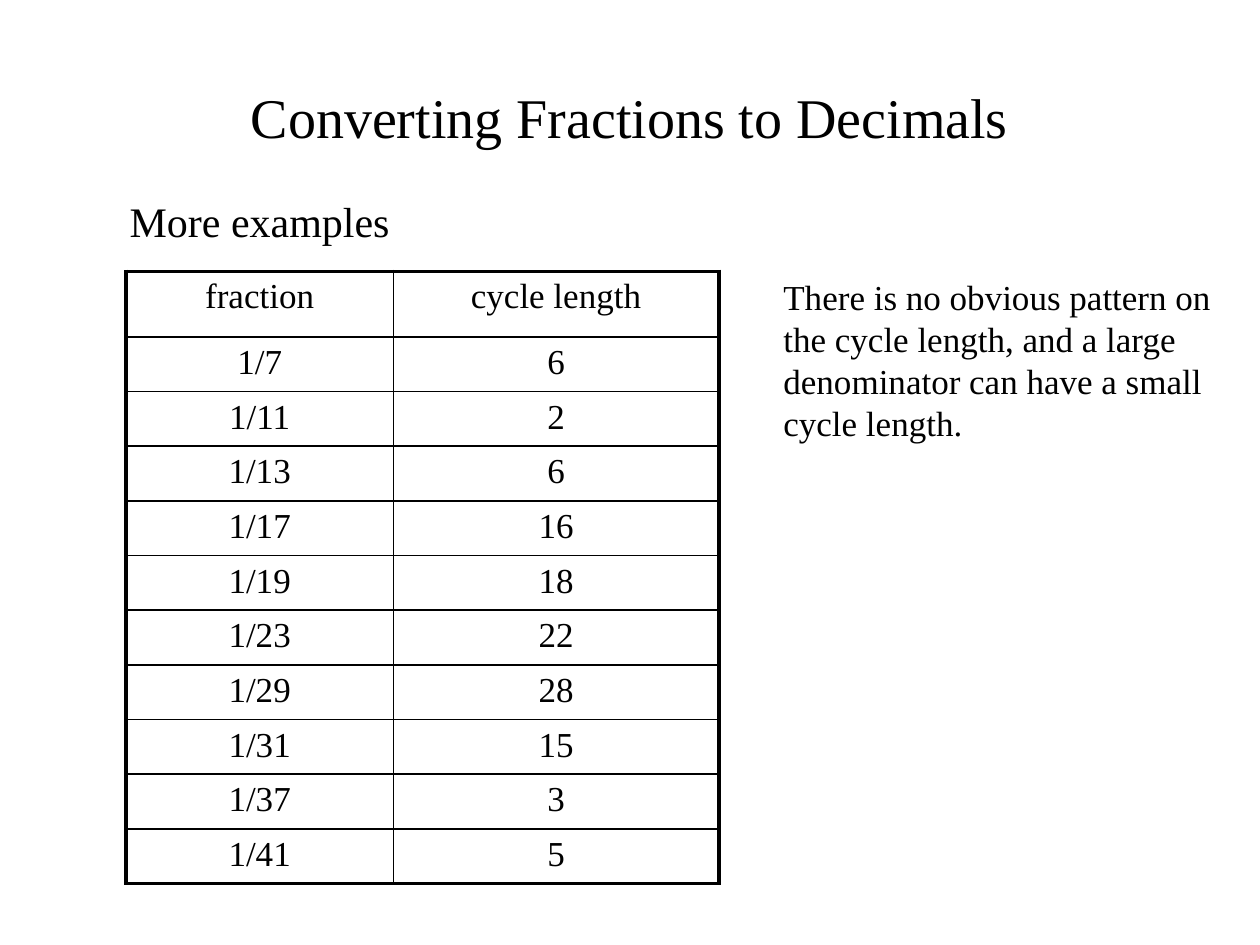
from lxml.etree import SubElement
from pptx import Presentation
from pptx.dml.color import RGBColor
from pptx.enum.text import MSO_ANCHOR as Anchor, PP_ALIGN as Align
from pptx.oxml.ns import qn
from pptx.util import Pt

# Content
TITLE = "Converting Fractions to Decimals"
SUBTITLE = "More examples"
NOTE = ("There is no obvious pattern on the cycle length, and a large "
        "denominator can have a small cycle length.")
ROWS = [
    ("fraction", "cycle length"),
    ("1/7", "6"), ("1/11", "2"), ("1/13", "6"), ("1/17", "16"),
    ("1/19", "18"), ("1/23", "22"), ("1/29", "28"), ("1/31", "15"),
    ("1/37", "3"), ("1/41", "5"),
]

# Layout and style, in points
FONT, BLACK = "Times New Roman", "000000"
TABLE_LEFT, TABLE_TOP = 72, 155
COLUMN_WIDTHS = (152.8, 186)
HEADER_HEIGHT, ROW_HEIGHT = 37.5, 31.25
OUTER_LINE, INNER_LINE = 2.25, 1
TEXTS = [
    # text, (left, top, width, height), size, frame format, alignment
    (TITLE, (36, 21.6, 648, 90), 32,
     {"word_wrap": True, "vertical_anchor": Anchor.MIDDLE}, Align.CENTER),
    (SUBTITLE, (67, 108, 164, 36.5), 24, {"word_wrap": False}, Align.LEFT),
    (NOTE, (440.6, 154, 259.2, 103), 20, {"word_wrap": True}, Align.LEFT),
]


def color(value):
    return RGBColor.from_string(value)


def write(frame, text, size, align):
    para = frame.paragraphs[0]
    para.alignment = align
    span = para.add_run()
    span.text = text
    for name, value in {"name": FONT, "size": Pt(size)}.items():
        setattr(span.font, name, value)
    span.font.color.rgb = color(BLACK)


def add_borders(cell, widths):
    properties = cell._tc.get_or_add_tcPr()
    for side, width in widths.items():
        line = SubElement(properties, qn(f"a:ln{side}"), w=str(Pt(width)))
        fill = SubElement(line, qn("a:solidFill"))
        SubElement(fill, qn("a:srgbClr"), val=BLACK)


deck = Presentation()
deck.slide_width, deck.slide_height = Pt(720), Pt(540)
page = deck.slides.add_slide(deck.slide_layouts[6])

# Title, subtitle and note
for text, place, size, frame_format, align in TEXTS:
    frame = page.shapes.add_textbox(*map(Pt, place)).text_frame
    for name, value in frame_format.items():
        setattr(frame, name, value)
    write(frame, text, size, align)

# Table of cycle lengths
heights = [HEADER_HEIGHT] + [ROW_HEIGHT] * (len(ROWS) - 1)
table = page.shapes.add_table(
    len(ROWS), len(COLUMN_WIDTHS), Pt(TABLE_LEFT), Pt(TABLE_TOP),
    Pt(sum(COLUMN_WIDTHS)), Pt(sum(heights))).table
table.first_row = table.horz_banding = False
for column, width in zip(table.columns, COLUMN_WIDTHS):
    column.width = Pt(width)

last_row, last_column = len(ROWS) - 1, len(COLUMN_WIDTHS) - 1
for r, values in enumerate(ROWS):
    table.rows[r].height = Pt(heights[r])
    for c, value in enumerate(values):
        cell = table.cell(r, c)
        write(cell.text_frame, value, 20, Align.CENTER)
        # Thick lines only on the outside; borders come before the fill
        on_edge = {"L": c == 0, "R": c == last_column,
                   "T": r == 0, "B": r == last_row}
        add_borders(cell, {side: OUTER_LINE if edge else INNER_LINE
                           for side, edge in on_edge.items()})
        cell.fill.background()

deck.save("out.pptx")
